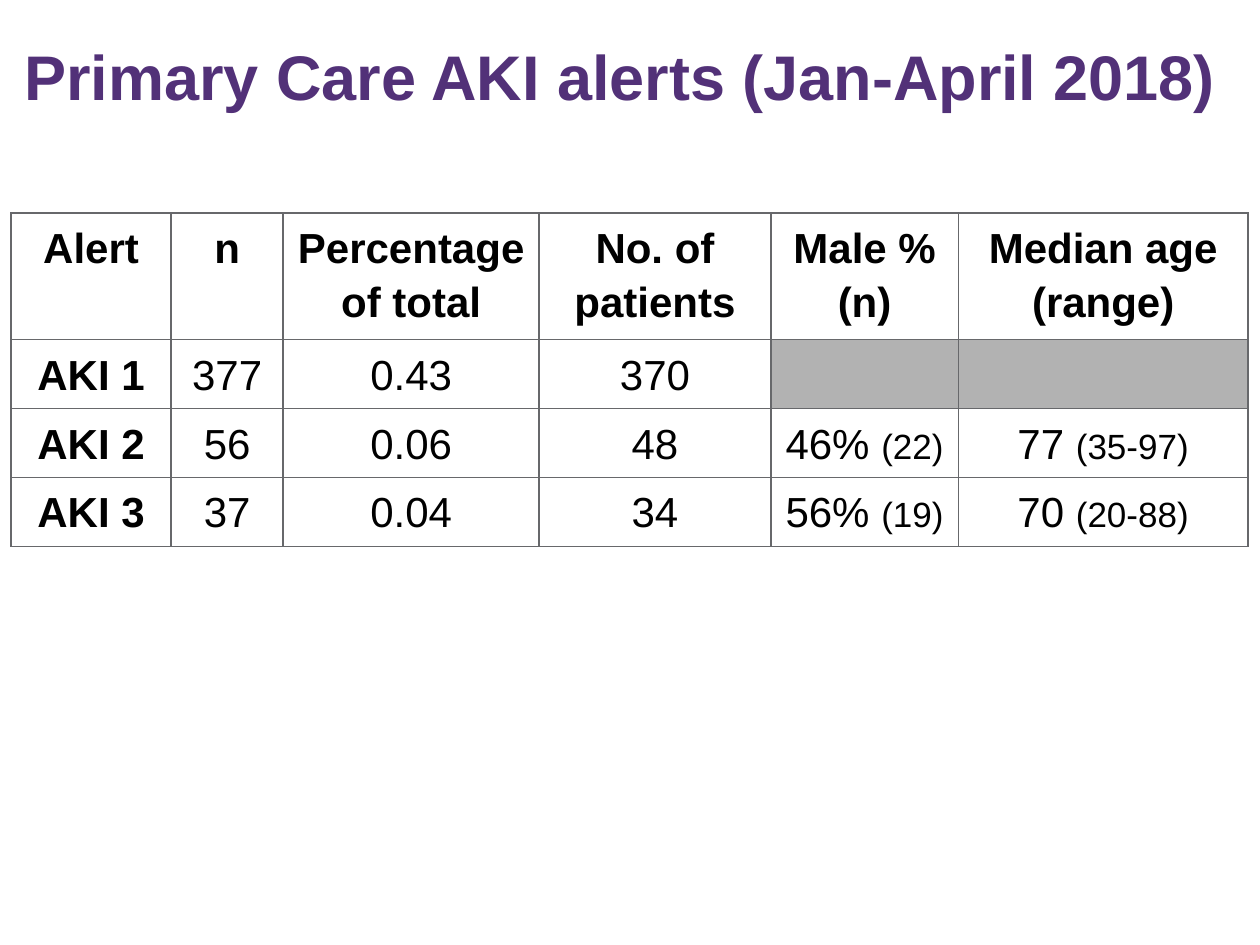
from dataclasses import dataclass

import lxml.etree
import pptx
import pptx.dml.color
import pptx.enum.text
import pptx.oxml.ns
import pptx.util

Cm = pptx.util.Cm
Pt = pptx.util.Pt
RGB = pptx.dml.color.RGBColor.from_string
CENTER = pptx.enum.text.PP_ALIGN.CENTER


@dataclass(frozen=True)
class Theme:
    font: str = "Arial"
    title_color: str = "523178"
    text_color: str = "000000"
    paper: str = "FFFFFF"
    withheld: str = "B2B2B2"
    rule: str = "67686B"
    title_size: int = 36
    body_size: int = 24
    detail_size: int = 20
    rule_width: int = 1


THEME = Theme()
COLUMN_WIDTHS = [3.23, 2.26, 5.16, 4.67, 3.78, 5.84]
HEADER_HEIGHT = 2.44
ROW_HEIGHT = 1.33
HEADINGS = ["Alert", "n", "Percentage of total", "No. of patients",
            "Male % (n)", "Median age (range)"]
ALERTS = [
    ["AKI 1", "377", "0.43", "370", None, None],
    ["AKI 2", "56", "0.06", "48", ("46% ", "(22)"), ("77 ", "(35-97)")],
    ["AKI 3", "37", "0.04", "34", ("56% ", "(19)"), ("70 ", "(20-88)")],
]


def add_run(paragraph, text, size, color, bold=False):
    run = paragraph.add_run()
    run.text = text
    run.font.name = THEME.font
    run.font.size = Pt(size)
    run.font.bold = bold
    run.font.color.rgb = RGB(color)


def add_title(slide, left, top, width, height):
    title = slide.shapes.add_textbox(Cm(left), Cm(top), Cm(width), Cm(height))
    frame = title.text_frame
    frame.word_wrap = True
    frame.vertical_anchor = pptx.enum.text.MSO_ANCHOR.TOP
    frame.margin_left = frame.margin_top = Cm(0.25)
    frame.margin_right = Cm(0.65)
    heading = frame.paragraphs[0]
    heading.alignment = CENTER
    add_run(heading, "Primary Care AKI alerts (Jan-April 2018)",
            THEME.title_size, THEME.title_color, bold=True)


def draw_borders(cell):
    properties = cell._tc.get_or_add_tcPr()
    qn = pptx.oxml.ns.qn
    for position, side in enumerate(("a:lnL", "a:lnR", "a:lnT", "a:lnB")):
        border = lxml.etree.Element(qn(side), w=str(Pt(THEME.rule_width)))
        fill = lxml.etree.SubElement(border, qn("a:solidFill"))
        lxml.etree.SubElement(fill, qn("a:srgbClr"), val=THEME.rule)
        properties.insert(position, border)


def fill_cell(cell, content, bold):
    cell.margin_left = cell.margin_right = Cm(0.19)
    cell.margin_top = cell.margin_bottom = Cm(0.11)
    cell.fill.solid()
    cell.fill.fore_color.rgb = RGB(THEME.withheld if content is None else THEME.paper)
    draw_borders(cell)
    if content is None:
        return
    value, detail = content if isinstance(content, tuple) else (content, None)
    paragraph = cell.text_frame.paragraphs[0]
    paragraph.alignment = CENTER
    paragraph.line_spacing = 1.15
    add_run(paragraph, value, THEME.body_size, THEME.text_color, bold)
    if detail:
        add_run(paragraph, detail, THEME.detail_size, THEME.text_color, bold)


def add_alert_table(slide, left, top):
    records = [HEADINGS] + ALERTS
    heights = [HEADER_HEIGHT] + [ROW_HEIGHT] * len(ALERTS)
    table = slide.shapes.add_table(
        len(records), len(HEADINGS), Cm(left), Cm(top),
        Cm(sum(COLUMN_WIDTHS)), Cm(sum(heights))).table
    table.first_row = table.horz_banding = False
    for column, width in zip(table.columns, COLUMN_WIDTHS):
        column.width = Cm(width)
    for row_index, (row, height, record) in enumerate(zip(table.rows, heights, records)):
        row.height = Cm(height)
        for column_index, content in enumerate(record):
            fill_cell(row.cells[column_index], content,
                      bold=row_index == 0 or column_index == 0)


def main():
    deck = pptx.Presentation()
    deck.slide_width = Cm(25.4)
    deck.slide_height = Cm(19.05)
    slide = deck.slides.add_slide(deck.slide_layouts[6])
    add_title(slide, 0, 0.5, 25.4, 2.24)
    add_alert_table(slide, 0.22, 4.29)
    deck.save("out.pptx")


if __name__ == "__main__":
    main()
